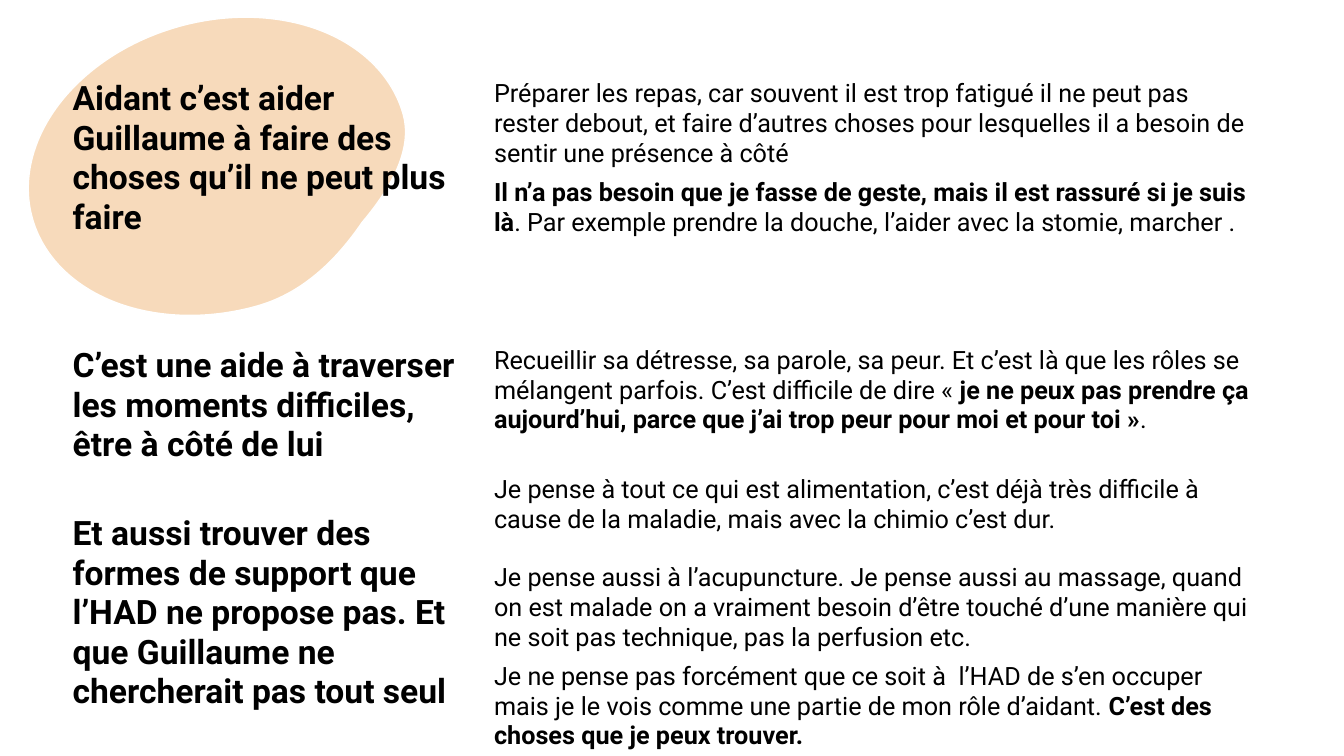
from dataclasses import dataclass

from lxml.etree import SubElement
from pptx import Presentation
from pptx.dml.color import RGBColor
from pptx.enum.shapes import MSO_SHAPE as Preset
from pptx.enum.text import MSO_ANCHOR as Anchor
from pptx.oxml.ns import qn
from pptx.slide import Slide
from pptx.table import Table
from pptx.util import Inches, Pt

BLACK = RGBColor(0x00, 0x00, 0x00)
WHITE = RGBColor(0xFF, 0xFF, 0xFF)
ORANGE = RGBColor(0xE7, 0x85, 0x20)
FONT = "Roboto"
THEME_SIZE = 24
DETAIL_SIZE = 18
DETAIL_GAP = 21
ROW_HEIGHT = 0.8
COLUMN_WIDTHS = (4.18, 7.78)
PLAIN_STYLE = "{2D5ABB26-0587-4C30-8999-92F81FD0307C}"


@dataclass(frozen=True)
class Span:
    text: str
    bold: bool = False


Paragraphs = list[list[Span]]


@dataclass(frozen=True)
class Section:
    theme: str
    details: list[Paragraphs]
    anchor: Anchor = Anchor.MIDDLE


SECTIONS = [
    Section(
        "Aidant c’est aider Guillaume à faire des choses qu’il ne peut plus faire",
        [
            [[Span("Préparer les repas, car souvent il est trop fatigué il ne peut pas rester debout, "
                   "et faire d’autres choses pour lesquelles il a besoin de sentir une présence à côté")]],
            [[Span("Il n’a pas besoin que je fasse de geste, mais il est rassuré si je suis là", True),
              Span(". Par exemple prendre la douche, l’aider avec la stomie, marcher . ")]],
        ],
        Anchor.TOP,
    ),
    Section(
        "C’est une aide à traverser les moments difficiles, être à côté de lui",
        [
            [[Span("Recueillir sa détresse, sa parole, sa peur. Et c’est là que les rôles se mélangent "
                   "parfois. C’est difficile de dire «"),
              Span(" je ne peux pas prendre ça aujourd’hui, parce que j’ai trop peur pour moi "
                   "et pour toi »", True),
              Span(". ")]],
        ],
    ),
    Section(
        "Et aussi trouver des formes de support que l’HAD ne propose pas. "
        "Et que Guillaume ne chercherait pas tout seul ",
        [
            [[Span("Je pense à tout ce qui est alimentation, c’est déjà très difficile à cause de la "
                   "maladie, mais avec la chimio c’est dur.")],
             [Span("Je pense aussi à l’acupuncture. Je pense aussi au massage, quand on est malade on a "
                   "vraiment besoin d’être touché d’une manière qui ne soit pas technique, "
                   "pas la perfusion etc.")]],
            [[Span("Je ne pense pas forcément que ce soit à  l’HAD de s’en occuper mais je le vois "
                   "comme une partie de mon rôle d’aidant. "),
              Span("C’est des choses que je peux trouver. ", True)]],
        ],
    ),
]


def add_blob(slide: Slide) -> None:
    blob = slide.shapes.add_shape(
        Preset.TEAR, Inches(0.72), Inches(-0.26), Inches(2.88), Inches(3.82))
    blob.adjustments[0] = 0.642
    blob.rotation = 74.3
    blob.shadow.inherit = False
    blob.fill.solid()
    blob.fill.fore_color.rgb = ORANGE
    tint = blob.fill._xPr.find(qn("a:solidFill"))[0]
    SubElement(tint, qn("a:alpha")).set("val", "30000")
    blob.line.color.rgb = WHITE
    blob.line.width = Pt(1)


def write_cell(table: Table, row: int, column: int, paragraphs: Paragraphs,
               size: int, anchor: Anchor = Anchor.TOP) -> None:
    cell = table.cell(row, column)
    cell.vertical_anchor = anchor
    frame = cell.text_frame
    for index, spans in enumerate(paragraphs):
        paragraph = frame.add_paragraph() if index else frame.paragraphs[0]
        if index:
            paragraph.space_before = Pt(DETAIL_GAP)
        for span in spans:
            run = paragraph.add_run()
            run.text = span.text
            run.font.name = FONT
            run.font.size = Pt(size)
            run.font.bold = span.bold
            run.font.color.rgb = BLACK


def add_testimony(slide: Slide) -> None:
    row_count = sum(len(section.details) for section in SECTIONS)
    holder = slide.shapes.add_table(
        row_count, len(COLUMN_WIDTHS), Inches(0.62), Inches(0.74),
        Inches(sum(COLUMN_WIDTHS)), Inches(6.2))
    testimony = holder.table
    testimony.first_row = False
    testimony.horz_banding = False
    testimony._tbl.tblPr.find(qn("a:tableStyleId")).text = PLAIN_STYLE
    for column, width in zip(testimony.columns, COLUMN_WIDTHS):
        column.width = Inches(width)
    for row in testimony.rows:
        row.height = Inches(ROW_HEIGHT)
    holder.height = Inches(6.2)
    for cell in testimony.iter_cells():
        cell.fill.background()

    top = 0
    for section in SECTIONS:
        bottom = top + len(section.details) - 1
        if bottom > top:
            testimony.cell(top, 0).merge(testimony.cell(bottom, 0))
        write_cell(testimony, top, 0, [[Span(section.theme, True)]], THEME_SIZE, section.anchor)
        for row, paragraphs in enumerate(section.details, top):
            write_cell(testimony, row, 1, paragraphs, DETAIL_SIZE)
        top = bottom + 1


def main() -> None:
    deck = Presentation()
    deck.slide_width = Inches(13.33)
    deck.slide_height = Inches(7.5)
    slide = deck.slides.add_slide(deck.slide_layouts[6])
    add_blob(slide)
    add_testimony(slide)
    deck.save("out.pptx")


if __name__ == "__main__":
    main()
